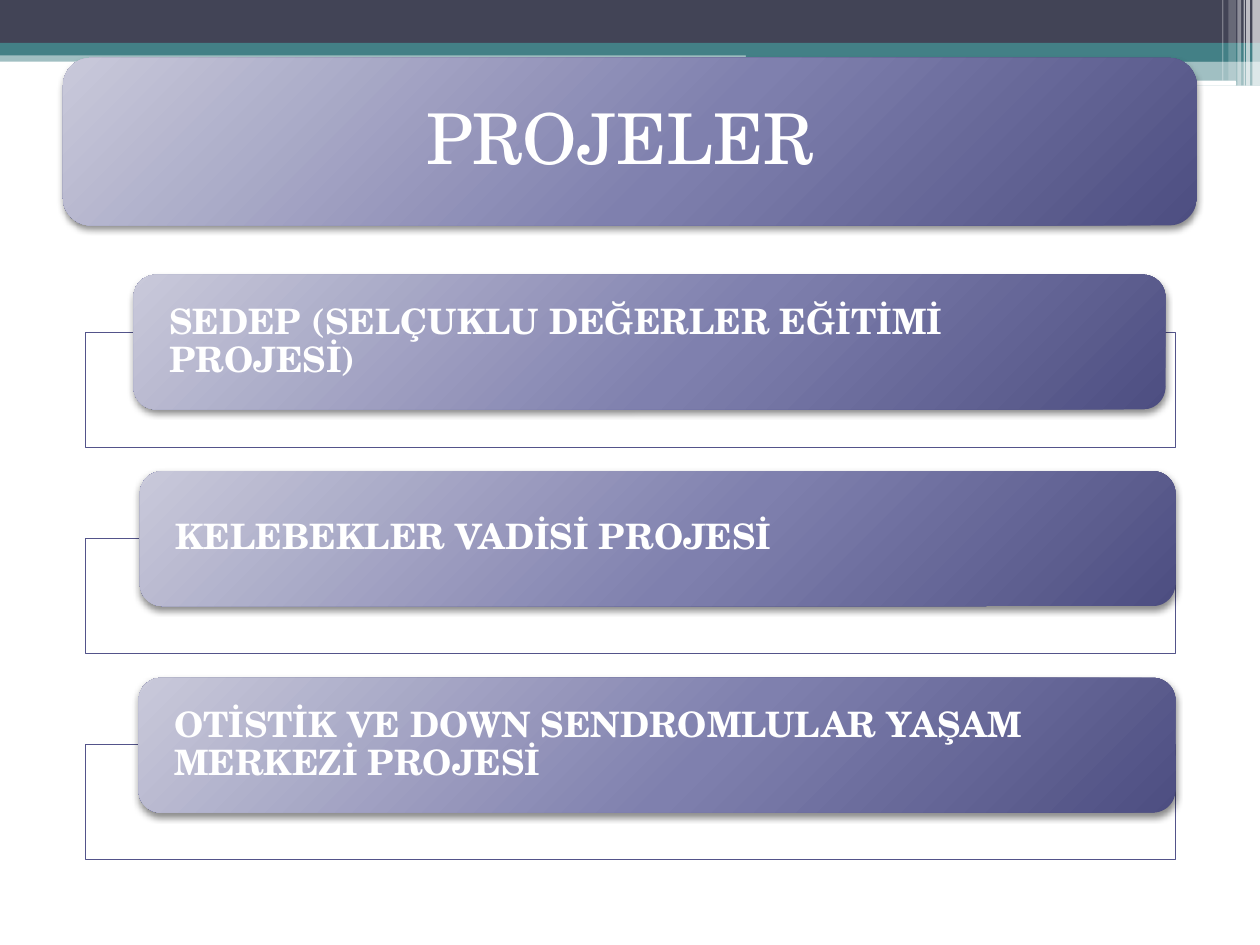
"""Build the projects slide with a banner and three framed cards."""
from dataclasses import dataclass

from lxml.etree import SubElement
from pptx import Presentation
from pptx.dml.color import RGBColor
from pptx.enum.shapes import MSO_SHAPE
from pptx.enum.text import MSO_ANCHOR, PP_ALIGN
from pptx.oxml import parse_xml
from pptx.oxml.ns import nsdecls, qn
from pptx.util import Inches, Pt


@dataclass(frozen=True)
class Theme:
    font: str = "TeX Gyre Schola"
    title_size: int = 40
    card_size: int = 20
    dark: str = "424456"
    teal: str = "438086"
    white: str = "FFFFFF"
    black: str = "000000"
    outline: str = "53548A"
    gradient: tuple = ((0, "C9C9DA"), (55, "7F80AE"), (100, "4D4E81"))


def write(sp, text, *, font, size, color, bold=False, align=PP_ALIGN.LEFT, inset=(0, 0)):
    tf = sp.text_frame
    tf.word_wrap = True
    tf.vertical_anchor = MSO_ANCHOR.MIDDLE
    tf.margin_left = tf.margin_right = Inches(inset[0])
    tf.margin_top = tf.margin_bottom = Inches(inset[1])
    p = tf.paragraphs[0]
    p.alignment = align
    p.line_spacing = 0.9
    r = p.add_run()
    r.text = text
    r.font.name = font
    r.font.size = Pt(size)
    r.font.bold = bold
    r.font.color.rgb = RGBColor.from_string(color)


class Deck:
    def __init__(self, slide, theme):
        self.s = slide
        self.theme = theme

    def shape(self, kind, box):
        sp = self.s.shapes.add_shape(kind, *map(Inches, box))
        sp.shadow.inherit = False
        sp.line.fill.background()
        return sp

    def block(self, box, color, alpha=100, kind=MSO_SHAPE.RECTANGLE):
        sp = self.shape(kind, box)
        sp.fill.solid()
        sp.fill.fore_color.rgb = RGBColor.from_string(color)
        if alpha < 100:
            clr = sp.fill._xPr.find(qn("a:solidFill"))[0]
            SubElement(clr, qn("a:alpha"), val=str(alpha * 1000))
        return sp

    def frame(self, box):
        sp = self.block(box, self.theme.white, 90)
        sp.line.color.rgb = RGBColor.from_string(self.theme.outline)
        sp.line.width = Pt(0.75)

    def card(self, box, text, **style):
        sp = self.shape(MSO_SHAPE.ROUNDED_RECTANGLE, box)
        stops = "".join(
            f'<a:gs pos="{pos * 1000}"><a:srgbClr val="{color}"/></a:gs>'
            for pos, color in self.theme.gradient
        )
        grad = parse_xml(
            f'<a:gradFill {nsdecls("a")} rotWithShape="1"><a:gsLst>{stops}</a:gsLst>'
            '<a:path path="circle"><a:fillToRect l="-40000" t="-90000" '
            'r="140000" b="190000"/></a:path></a:gradFill>'
        )
        spPr = sp._element.spPr
        spPr.find(qn("a:prstGeom")).addnext(grad)
        shadow = SubElement(
            spPr.find(qn("a:effectLst")), qn("a:outerShdw"), blurRad=str(Pt(4)),
            dist=str(Pt(2)), dir="5400000", rotWithShape="0",
        )
        clr = SubElement(shadow, qn("a:srgbClr"), val=self.theme.black)
        SubElement(clr, qn("a:alpha"), val="45000")
        write(sp, text, font=self.theme.font, color=self.theme.white, **style)

    def header(self):
        t = self.theme
        for box, color, alpha in (
            ((0, 0.4, 10, 0.09), t.teal, 50),
            ((0, 0, 10, 0.34), t.dark, 100),
            ((0, 0.34, 10, 0.1), t.teal, 100),
            ((5.92, 0.39, 4.08, 0.1), t.teal, 100),
            ((5.92, 0.48, 4.08, 0.2), t.teal, 50),
        ):
            self.block(box, color, alpha)
        for box in ((5.91, 0.54, 3.35, 0.03), (8.06, 0.64, 1.75, 0.04)):
            self.block(box, t.white, kind=MSO_SHAPE.ROUNDED_RECTANGLE)
        for left, width, height, alpha in (
            (9.94, 0.06, 0.68, 65),
            (9.89, 0.03, 0.68, 65),
            (9.87, 0.01, 0.68, 60),
            (9.82, 0.03, 0.68, 40),
            (9.75, 0.06, 0.64, 20),
            (9.7, 0.01, 0.64, 30),
        ):
            self.block((left, 0, width, height), t.white, alpha)


def main():
    prs = Presentation()
    prs.slide_width, prs.slide_height = Inches(10), Inches(7.5)
    theme = Theme()
    deck = Deck(prs.slides.add_slide(prs.slide_layouts[6]), theme)
    deck.header()
    deck.card((0.5, 0.46, 9, 1.33), "PROJELER ", size=theme.title_size,
              align=PP_ALIGN.CENTER, inset=(0.17, 0.17))
    projects = (
        (1.06, 2.18, 8.19, "SEDEP (SELÇUKLU DEĞERLER EĞİTİMİ PROJESİ)"),
        (1.11, 3.74, 8.22, "KELEBEKLER VADİSİ PROJESİ"),
        (1.1, 5.38, 8.23, "OTİSTİK VE DOWN SENDROMLULAR YAŞAM MERKEZİ PROJESİ"),
    )
    for i, (left, top, width, text) in enumerate(projects):
        deck.frame((0.68, 2.64 + i * 1.635, 8.65, 0.91))
        deck.card((left, top, width, 1.07), text, size=theme.card_size,
                  bold=True, inset=(0.23, 0))
    prs.save("out.pptx")


if __name__ == "__main__":
    main()
